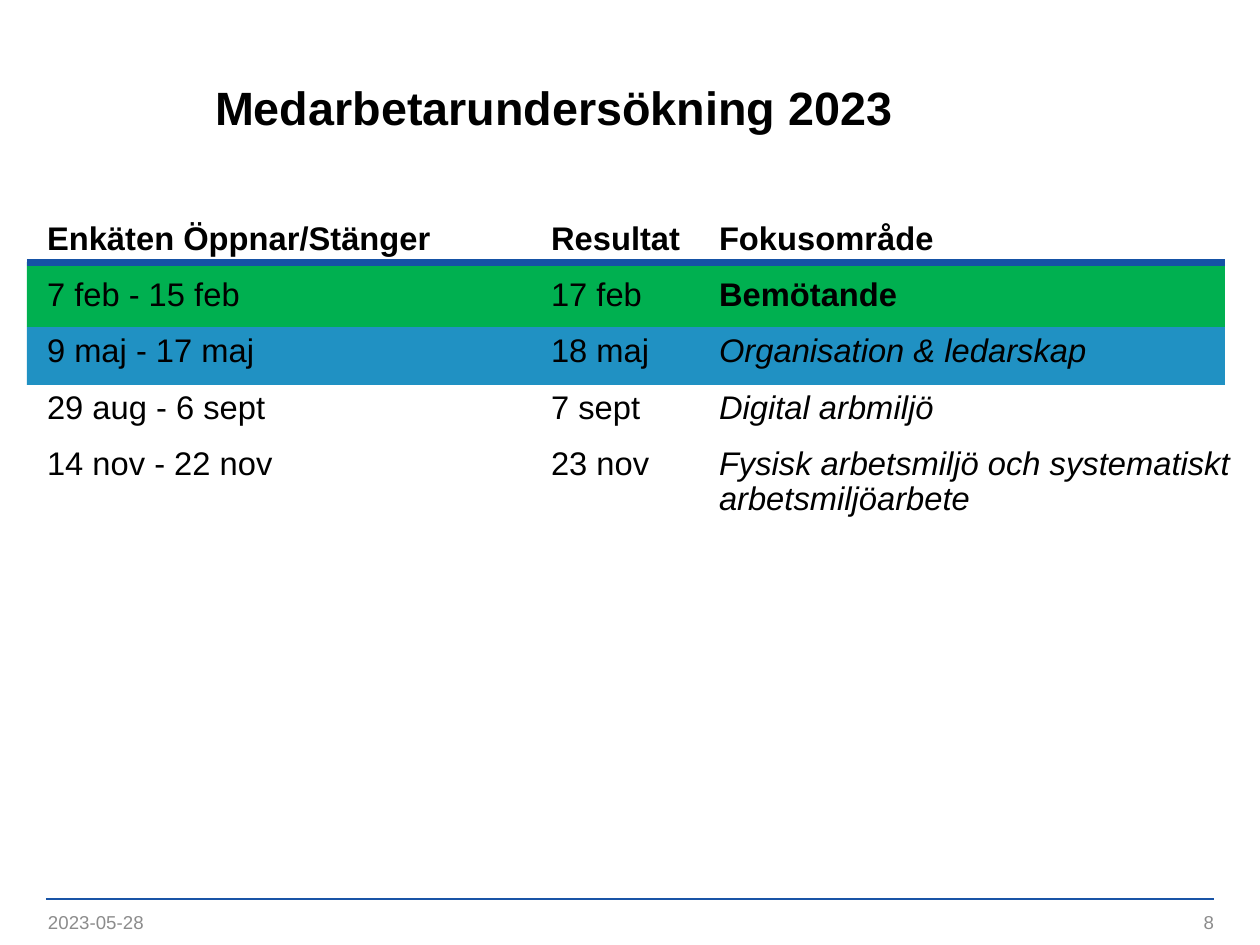
from dataclasses import dataclass

from lxml import etree
from pptx import Presentation, util as u
from pptx.dml.color import RGBColor
from pptx.enum import shapes, text
from pptx.oxml.ns import qn

EMU_PER_PX = 914400 / 168


@dataclass(frozen=True)
class Theme:
    font: str = "Arial"
    ink: str = "000000"
    muted: str = "8C8C8C"
    footer_rule: str = "1954A6"
    header_rule: str = "1552A6"
    completed: str = "00B050"
    current: str = "2091C3"
    title_size: int = 20
    body_size: int = 14
    footer_size: int = 8


@dataclass(frozen=True)
class Box:
    left: int
    top: int
    width: int
    height: int


@dataclass(frozen=True)
class Band:
    box: Box
    color: str


@dataclass(frozen=True)
class Rule:
    left: int
    right: int
    y: int
    color: str
    weight: int


@dataclass(frozen=True)
class Survey:
    period: str
    result: str
    focus: tuple[str, ...]
    bold: bool = False


@dataclass(frozen=True)
class Footer:
    words: str
    box: Box
    align: text.PP_ALIGN


THEME = Theme()
TITLE_BOX = Box(215, 47, 998, 124)
BODY_BOX = Box(47, 222, 1211, 653)
TAB_STEP = 168
FOCUS_INDENT = "\t" * 4

FOOTER_RULE = Rule(46, 1214, 899, THEME.footer_rule, 1)
HEADER_RULE = Rule(27, 1225, 263, THEME.header_rule, 3)
BANDS = (
    Band(Box(27, 327, 1198, 58), THEME.current),
    Band(Box(27, 262, 1198, 65), THEME.completed),
)
SURVEYS = (
    Survey("7 feb - 15 feb", "17 feb", ("Bemötande",), bold=True),
    Survey("9 maj - 17 maj", "18 maj", ("Organisation & ledarskap",)),
    Survey("29 aug - 6 sept", "7 sept", ("Digital arbmiljö",)),
    Survey("14 nov - 22 nov", "23 nov",
           ("Fysisk arbetsmiljö och systematiskt", "arbetsmiljöarbete")),
)
FOOTERS = (
    Footer("8", Box(930, 901, 284, 42), text.PP_ALIGN.RIGHT),
    Footer("2023-05-28", Box(48, 901, 284, 42), text.PP_ALIGN.LEFT),
)


def px(length: int) -> int:
    return round(length * EMU_PER_PX)


def place(shape, box: Box) -> None:
    shape.left, shape.top = px(box.left), px(box.top)
    shape.width, shape.height = px(box.width), px(box.height)


def prepare_frame(shape, anchor: text.MSO_ANCHOR):
    frame = shape.text_frame
    frame.margin_left = frame.margin_right = frame.margin_top = frame.margin_bottom = 0
    frame.word_wrap = True
    frame.auto_size = text.MSO_AUTO_SIZE.NONE
    frame.vertical_anchor = anchor
    return frame


def style(paragraph, size: int, color: str, bold: bool = False) -> None:
    font = paragraph.font
    font.name, font.size, font.bold = THEME.font, u.Pt(size), bold
    font.color.rgb = RGBColor.from_string(color)


def draw_rule(slide, rule: Rule) -> None:
    line = slide.shapes.add_connector(
        shapes.MSO_CONNECTOR.STRAIGHT,
        px(rule.left), px(rule.y), px(rule.right), px(rule.y))
    line.line.color.rgb = RGBColor.from_string(rule.color)
    line.line.width = u.Pt(rule.weight)
    etree.SubElement(line._element.spPr, qn("a:effectLst"))


def draw_band(slide, band: Band) -> None:
    box = band.box
    row = slide.shapes.add_shape(
        shapes.MSO_SHAPE.RECTANGLE,
        px(box.left), px(box.top), px(box.width), px(box.height))
    row.shadow.inherit = False
    row.fill.solid()
    row.fill.fore_color.rgb = RGBColor.from_string(band.color)
    row.line.fill.background()


def draw_footer(slide, footer: Footer) -> None:
    box = footer.box
    label = slide.shapes.add_textbox(
        px(box.left), px(box.top), px(box.width), px(box.height))
    paragraph = prepare_frame(label, text.MSO_ANCHOR.MIDDLE).paragraphs[0]
    paragraph.text = footer.words
    paragraph.alignment = footer.align
    style(paragraph, THEME.footer_size, THEME.muted)


def format_row(paragraph, space_before: float, bold: bool = False) -> None:
    paragraph.line_spacing = 0.9
    paragraph.space_before = u.Pt(space_before)
    paragraph.space_after = u.Pt(1.5)
    properties = paragraph._p.get_or_add_pPr()
    properties.set("marL", "0")
    properties.set("indent", "0")
    properties.set("defTabSz", str(px(TAB_STEP)))
    etree.SubElement(properties, qn("a:buNone"))
    style(paragraph, THEME.body_size, THEME.ink, bold)


def write_survey(paragraph, survey: Survey) -> None:
    format_row(paragraph, space_before=7.5)
    paragraph.add_run().text = f"{survey.period}\t\t{survey.result}\t"
    for index, focus_line in enumerate(survey.focus):
        if index:
            paragraph.add_line_break()
            focus_line = FOCUS_INDENT + focus_line
        focus = paragraph.add_run()
        focus.text = focus_line
        if survey.bold:
            focus.font.bold = True
        else:
            focus.font.italic = True


def main() -> None:
    deck = Presentation()
    deck.slide_width, deck.slide_height = px(1260), px(945)
    slide = deck.slides.add_slide(deck.slide_layouts[1])

    # Rules and highlighted rows
    draw_rule(slide, FOOTER_RULE)
    for band in BANDS:
        draw_band(slide, band)
    draw_rule(slide, HEADER_RULE)

    # Title
    title = slide.shapes.title
    place(title, TITLE_BOX)
    heading = prepare_frame(title, text.MSO_ANCHOR.MIDDLE).paragraphs[0]
    heading.text = "Medarbetarundersökning 2023"
    heading.alignment = text.PP_ALIGN.LEFT
    heading.line_spacing = u.Pt(22.5)
    style(heading, THEME.title_size, THEME.ink, bold=True)

    # Survey schedule, kept in front of the highlighted rows
    schedule = slide.placeholders[1]
    place(schedule, BODY_BOX)
    frame = prepare_frame(schedule, text.MSO_ANCHOR.TOP)
    columns = frame.paragraphs[0]
    columns.text = "Enkäten Öppnar/Stänger\tResultat\tFokusområde"
    format_row(columns, space_before=0, bold=True)
    for survey in SURVEYS:
        write_survey(frame.add_paragraph(), survey)
    slide.shapes._spTree.append(schedule._element)

    # Footer
    for footer in FOOTERS:
        draw_footer(slide, footer)

    deck.save("out.pptx")


if __name__ == "__main__":
    main()
